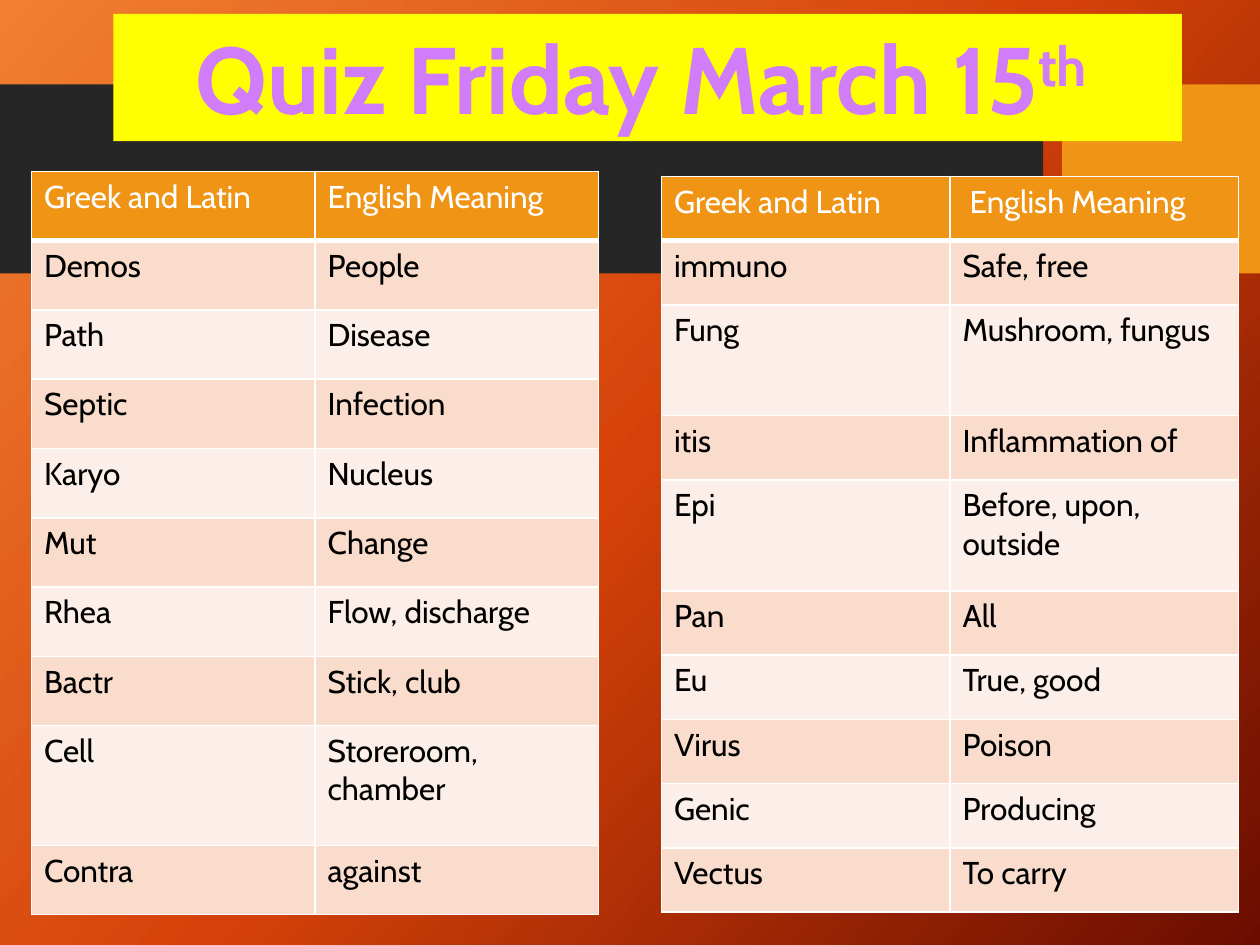
from lxml.etree import SubElement
from pptx import Presentation
from pptx.dml.color import RGBColor
from pptx.enum.shapes import MSO_SHAPE
from pptx.enum.text import MSO_ANCHOR, PP_ALIGN
from pptx.oxml import parse_xml
from pptx.oxml.ns import nsdecls, qn
from pptx.util import Inches, Pt

COLORS = {
    "glow": "F18031", "flame": "D54209", "ember": "6A0D00",
    "charcoal": "262626", "orange": "F09415",
    "peach": "F9DCCC", "cream": "FCEEE8",
    "yellow": "FFFF00", "violet": "D17DF9",
    "white": "FFFFFF", "black": "000000",
}
FONT = "Cabin"

LEFT_WORDS = [
    ("Greek and Latin", "English Meaning"),
    ("Demos", "People"),
    ("Path", "Disease"),
    ("Septic", "Infection"),
    ("Karyo", "Nucleus"),
    ("Mut", "Change"),
    ("Rhea", "Flow, discharge"),
    ("Bactr", "Stick, club"),
    ("Cell", "Storeroom, chamber"),
    ("Contra", "against"),
]
RIGHT_WORDS = [
    ("Greek and Latin", " English Meaning"),
    ("immuno", "Safe, free"),
    ("Fung", "Mushroom, fungus"),
    ("itis", "Inflammation of"),
    ("Epi", "Before, upon, outside"),
    ("Pan", "All"),
    ("Eu", "True, good"),
    ("Virus", "Poison"),
    ("Genic", "Producing"),
    ("Vectus", "To carry"),
]


def rgb(name):
    return RGBColor.from_string(COLORS[name])


def style_font(font, size, color, bold=False):
    font.name = FONT
    font.size = Pt(size)
    font.bold = bold
    font.color.rgb = rgb(color)


def set_background(slide):
    """Fill the page with a diagonal three-stop gradient."""
    slide.background.fill.solid()
    properties = slide.element.xpath("p:cSld/p:bg/p:bgPr")[0]
    stops = "".join(
        f'<a:gs pos="{position * 1000}"><a:srgbClr val="{COLORS[name]}"/></a:gs>'
        for position, name in ((0, "glow"), (50, "flame"), (100, "ember"))
    )
    gradient = parse_xml(
        f'<a:gradFill {nsdecls("a")} rotWithShape="1"><a:gsLst>{stops}</a:gsLst>'
        f'<a:lin ang="{42 * 60000}" scaled="0"/></a:gradFill>'
    )
    properties.replace(properties.find(qn("a:solidFill")), gradient)


def add_block(slide, left, top, width, height, color):
    block = slide.shapes.add_shape(
        MSO_SHAPE.RECTANGLE, Inches(left), Inches(top), Inches(width), Inches(height)
    )
    block.shadow.inherit = False
    block.fill.solid()
    block.fill.fore_color.rgb = rgb(color)
    block.line.fill.background()
    return block


def set_borders(cell, bottom=1):
    """Draw white borders, in points, ahead of the cell's fill."""
    properties = cell._tc.get_or_add_tcPr()
    widths = {"a:lnL": 1, "a:lnR": 1, "a:lnT": 1, "a:lnB": bottom}
    for index, (tag, width) in enumerate(widths.items()):
        line = SubElement(properties, qn(tag), w=str(Pt(width)))
        fill = SubElement(line, qn("a:solidFill"))
        SubElement(fill, qn("a:srgbClr"), val=COLORS["white"])
        properties.insert(index, line)


def add_word_table(slide, left, top, column_width, words, row_height, tall_rows, tall_height):
    heights = [tall_height if row in tall_rows else row_height for row in range(len(words))]
    table = slide.shapes.add_table(
        len(words), 2, Inches(left), Inches(top),
        Inches(2 * column_width), Inches(sum(heights)),
    ).table
    for column in table.columns:
        column.width = Inches(column_width)
    for row, (pair, height) in enumerate(zip(words, heights)):
        table.rows[row].height = Inches(height)
        header = row == 0
        band = "orange" if header else ("cream", "peach")[row % 2]
        for cell, text in zip(table.rows[row].cells, pair):
            cell.text = text
            cell.fill.solid()
            cell.fill.fore_color.rgb = rgb(band)
            set_borders(cell, bottom=3 if header else 1)
            style_font(cell.text_frame.paragraphs[0].font, 18, "white" if header else "black")


def add_title(slide):
    banner = add_block(slide, 0.9, 0.11, 8.48, 1.01, "yellow")
    frame = banner.text_frame
    frame.word_wrap = False
    frame.vertical_anchor = MSO_ANCHOR.TOP
    para = frame.paragraphs[0]
    para.alignment = PP_ALIGN.CENTER
    style_font(para.font, 54, "violet", bold=True)
    para.add_run().text = "Quiz Friday March 15"
    ordinal = para.add_run()
    ordinal.text = "th "
    ordinal.font._element.set("baseline", "30000")


def main():
    deck = Presentation()
    deck.slide_width, deck.slide_height = Inches(10), Inches(7.5)
    slide = deck.slides.add_slide(deck.slide_layouts[6])
    set_background(slide)
    add_block(slide, 0, 0.67, 8.28, 1.5, "charcoal")
    add_block(slide, 8.43, 0.67, 1.57, 1.5, "orange")
    add_word_table(slide, 0.25, 1.36, 2.25, LEFT_WORDS, 0.55, {8}, 0.95)
    add_word_table(slide, 5.25, 1.4, 2.29, RIGHT_WORDS, 0.51, {2, 4}, 0.88)
    add_title(slide)
    deck.save("out.pptx")


if __name__ == "__main__":
    main()
